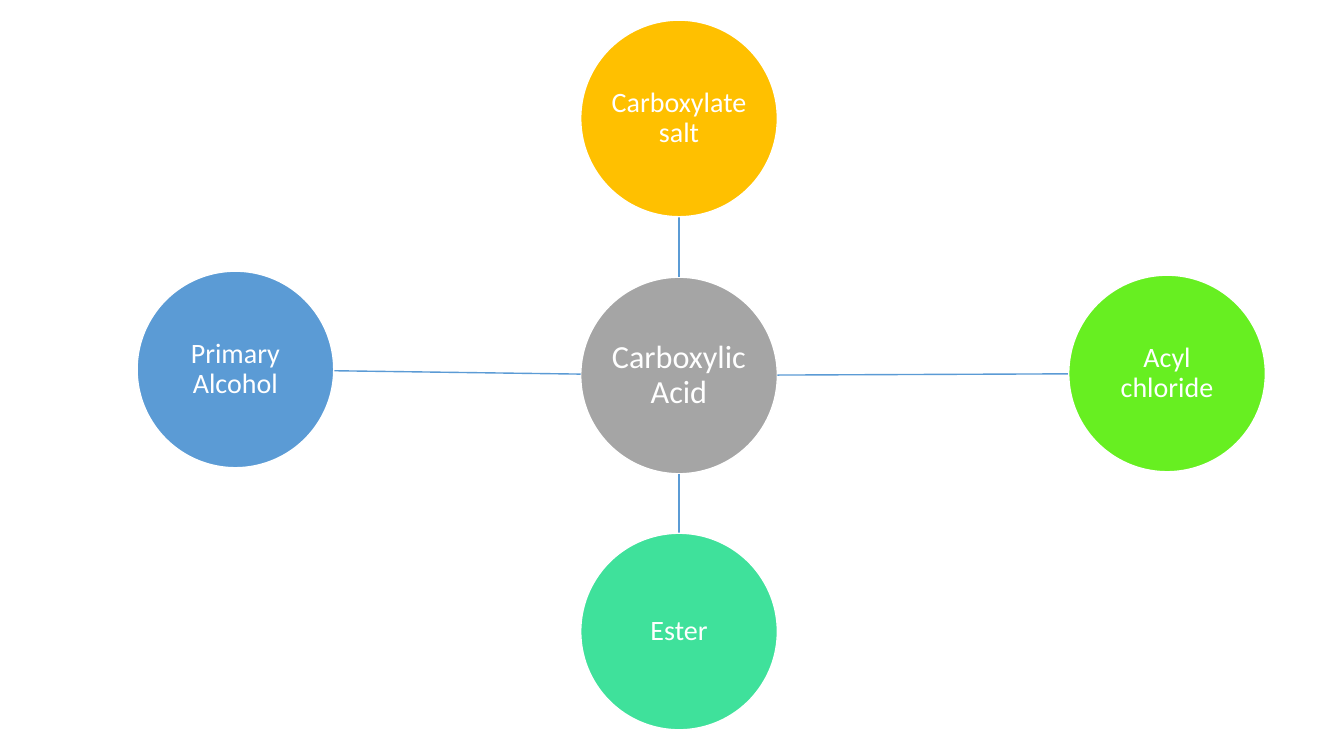
import math
from pptx import Presentation, util as u
from pptx.dml.color import RGBColor
from pptx.enum import shapes, text
from pptx.oxml.ns import qn

DIAMETER = 1.95
HUB = ("Carboxylic Acid", 5.76, 2.75, "A5A5A5")
PRODUCTS = [
    ("Carboxylate salt", 5.76, 0.2, "FFC000"),
    ("Acyl chloride", 10.6, 2.73, "67EF21"),
    ("Ester", 5.76, 5.29, "3FE19B"),
    ("Primary Alcohol", 1.36, 2.69, "5B9BD5"),
]
FRAME_FORMAT = {
    "word_wrap": True,
    "vertical_anchor": text.MSO_ANCHOR.MIDDLE,
    "margin_left": u.Inches(0.01),
    "margin_right": u.Inches(0.01),
    "margin_top": u.Inches(0.01),
    "margin_bottom": u.Inches(0.01),
}
PARAGRAPH_FORMAT = {"alignment": text.PP_ALIGN.CENTER, "line_spacing": 0.9}


def color(value):
    return RGBColor.from_string(value)


def apply_format(target, values):
    for name, value in values.items():
        setattr(target, name, value)


def add_circle(slide, label, left, top, fill, size):
    shape = slide.shapes.add_shape(
        shapes.MSO_SHAPE.OVAL,
        u.Inches(left), u.Inches(top), u.Inches(DIAMETER), u.Inches(DIAMETER),
    )
    shape.shadow.inherit = False
    shape.fill.solid()
    shape.fill.fore_color.rgb = color(fill)
    shape.line.color.rgb = color("FFFFFF")
    shape.line.width = u.Pt(1)
    apply_format(shape.text_frame, FRAME_FORMAT)
    paragraph = shape.text_frame.paragraphs[0]
    apply_format(paragraph, PARAGRAPH_FORMAT)
    run = paragraph.add_run()
    run.text = label
    apply_format(run.font, {"name": "Calibri", "size": u.Pt(size)})
    run.font.color.rgb = color("FFFFFF")


def add_spoke(slide, start, end):
    radius = DIAMETER / 2
    across, down = end[0] - start[0], end[1] - start[1]
    distance = math.hypot(across, down)
    points = []
    for reach in (radius, distance - radius):
        points.append(u.Inches(start[0] + radius + across * reach / distance))
        points.append(u.Inches(start[1] + radius + down * reach / distance))
    connector = slide.shapes.add_connector(shapes.MSO_CONNECTOR.STRAIGHT, *points)
    connector.line.color.rgb = color("5B9BD5")
    connector.line.width = u.Pt(1)
    properties = connector._element.spPr
    properties.append(properties.makeelement(qn("a:effectLst"), {}))


def add_radial_diagram(slide, hub, products):
    add_circle(slide, *hub, size=23)
    for product in products:
        add_spoke(slide, hub[1:3], product[1:3])
        add_circle(slide, *product, size=20)


def main():
    presentation = Presentation()
    presentation.slide_width = u.Inches(13.33)
    presentation.slide_height = u.Inches(7.5)
    slide = presentation.slides.add_slide(presentation.slide_layouts[6])
    add_radial_diagram(slide, HUB, PRODUCTS)
    presentation.save("out.pptx")


if __name__ == "__main__":
    main()
